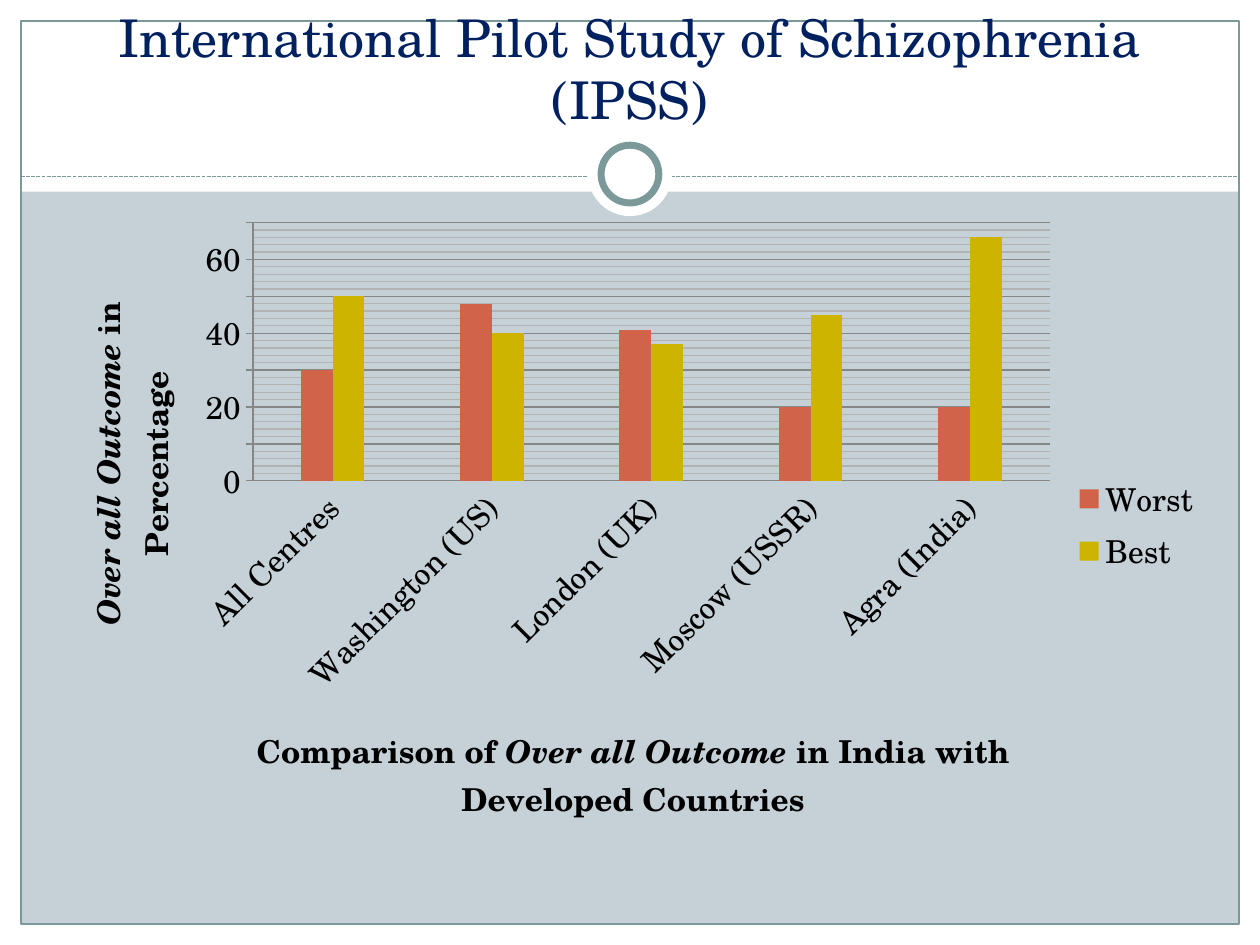
from dataclasses import dataclass
from typing import Optional

from lxml import etree
from pptx import Presentation
from pptx.chart.data import CategoryChartData
from pptx.dml.color import RGBColor
from pptx.enum import chart as charts, dml, shapes, text
from pptx.oxml import parse_xml
from pptx.oxml.ns import nsdecls, qn
from pptx.util import Pt


@dataclass(frozen=True)
class Theme:
    font: str = "TeX Gyre Schola"
    backdrop: str = "C5D1D7"
    paper: str = "FFFFFF"
    frame: str = "7C999A"
    heading: str = "002060"
    ink: str = "000000"
    grid: str = "868686"
    minor_grid: str = "B3B3B3"
    heading_size: float = 29.7
    chart_size: float = 18


@dataclass(frozen=True)
class Panel:
    kind: shapes.MSO_SHAPE
    left: float
    top: float
    width: float
    height: float
    fill: Optional[str] = None
    line: Optional[str] = None
    weight: float = 0.75


@dataclass(frozen=True)
class Outcome:
    name: str
    percentages: tuple
    color: str


@dataclass(frozen=True)
class AxisTitle:
    """Runs as (wording, italic), with the position as shares of the chart."""
    runs: tuple
    x: float
    y: float


THEME = Theme()
WIDTH, HEIGHT, MARGIN = 720, 540, 12
RULE_Y = 100.8
RECT, OVAL = shapes.MSO_SHAPE.RECTANGLE, shapes.MSO_SHAPE.OVAL


def centred_circle(diameter: float, line: Optional[str] = None) -> Panel:
    return Panel(OVAL, (WIDTH - diameter) / 2, 99.5 - diameter / 2,
                 diameter, diameter, THEME.paper, line, 4)


BORDERS = (
    Panel(RECT, 0, HEIGHT - MARGIN, WIDTH, MARGIN, THEME.paper),
    Panel(RECT, 0, 0, WIDTH, 109.5, THEME.paper),
    Panel(RECT, 0, 0, MARGIN, HEIGHT, THEME.paper),
    Panel(RECT, WIDTH - MARGIN, 0, MARGIN, HEIGHT, THEME.paper),
    Panel(RECT, MARGIN, MARGIN, WIDTH - 2 * MARGIN, HEIGHT - 2 * MARGIN,
          line=THEME.frame),
)
MEDALLION = (centred_circle(48), centred_circle(33, THEME.frame))

CENTRES = ("All Centres", "Washington (US)", "London (UK)",
           "Moscow (USSR)", "Agra (India)")
OUTCOMES = (
    Outcome("Worst", (30, 48, 41, 20, 20), "D16349"),
    Outcome("Best", (50, 40, 37, 45, 66), "CCB400"),
)
CENTRE_TITLE = AxisTitle((("Comparison of ", False), ("Over all Outcome", True),
                          (" in India with Developed Countries", False)), 0.18, 0.81)
PERCENT_TITLE = AxisTitle((("Over all Outcome", True), (" in Percentage", False)),
                          0.03, 0.14)


def rgb(value: str) -> RGBColor:
    return RGBColor.from_string(value)


def set_font(font, size: float, color: str) -> None:
    font.name, font.size = THEME.font, Pt(size)
    font.color.rgb = rgb(color)


def draw_panel(slide, panel: Panel) -> None:
    shape = slide.shapes.add_shape(panel.kind, Pt(panel.left), Pt(panel.top),
                                   Pt(panel.width), Pt(panel.height))
    shape.shadow.inherit = False
    if panel.fill:
        shape.fill.solid()
        shape.fill.fore_color.rgb = rgb(panel.fill)
    else:
        shape.fill.background()
    if panel.line:
        shape.line.color.rgb = rgb(panel.line)
        shape.line.width = Pt(panel.weight)
    else:
        shape.line.fill.background()


def draw_rule(slide) -> None:
    rule = slide.shapes.add_connector(shapes.MSO_CONNECTOR.STRAIGHT, Pt(MARGIN),
                                      Pt(RULE_Y), Pt(WIDTH - MARGIN), Pt(RULE_Y))
    rule.line.color.rgb = rgb(THEME.frame)
    rule.line.width = Pt(0.75)
    rule.line.dash_style = dml.MSO_LINE.SQUARE_DOT
    etree.SubElement(rule._element.spPr, qn("a:effectLst"))


def draw_heading(slide) -> None:
    heading = slide.shapes.add_textbox(Pt(24), Pt(18), Pt(672), Pt(60)).text_frame
    heading.word_wrap = True
    heading.vertical_anchor = text.MSO_ANCHOR.BOTTOM
    paragraph = heading.paragraphs[0]
    paragraph.alignment = text.PP_ALIGN.CENTER
    run = paragraph.add_run()
    run.text = "International Pilot Study of Schizophrenia (IPSS)"
    set_font(run.font, THEME.heading_size, THEME.heading)


def manual_layout(x: float, y: float, size: str = "", target: str = ""):
    return parse_xml(
        f'<c:layout {nsdecls("c")}><c:manualLayout>{target}'
        '<c:xMode val="edge"/><c:yMode val="edge"/>'
        f'<c:x val="{x}"/><c:y val="{y}"/>{size}</c:manualLayout></c:layout>')


def place(element, layout, index: int) -> None:
    """Put a manual layout in the element in place of any other."""
    for old in element.findall(qn("c:layout")):
        element.remove(old)
    element.insert(index, layout)


def title_axis(axis, title: AxisTitle) -> None:
    paragraph = axis.axis_title.text_frame.paragraphs[0]
    for wording, italic in title.runs:
        run = paragraph.add_run()
        run.text = wording
        set_font(run.font, THEME.chart_size, THEME.ink)
        run.font.bold, run.font.italic = True, italic
    place(axis.axis_title._element, manual_layout(title.x, title.y), 1)


def draw_chart(slide) -> None:
    data = CategoryChartData()
    data.categories = CENTRES
    for outcome in OUTCOMES:
        data.add_series(outcome.name, outcome.percentages)
    chart = slide.shapes.add_chart(charts.XL_CHART_TYPE.COLUMN_CLUSTERED, Pt(24),
                                   Pt(120), Pt(669.6), Pt(360), data).chart
    set_font(chart.font, THEME.chart_size, THEME.ink)
    chart.has_title = False
    chart.has_legend = True
    chart.legend.position = charts.XL_LEGEND_POSITION.RIGHT
    chart.legend.include_in_layout = False

    plot = chart.plots[0]
    plot.gap_width, plot.overlap, plot.vary_by_categories = 300, 0, False
    for series, outcome in zip(plot.series, OUTCOMES):
        series.format.fill.solid()
        series.format.fill.fore_color.rgb = rgb(outcome.color)

    centres, percent = chart.category_axis, chart.value_axis
    centres.major_tick_mark = charts.XL_TICK_MARK.NONE
    centres.tick_labels.font.size = Pt(THEME.chart_size)
    centres._element.txPr.bodyPr.set("rot", "-2700000")
    percent.minimum_scale, percent.maximum_scale = 0, 70
    percent.major_unit, percent.minor_unit = 10, 2
    percent.major_tick_mark = charts.XL_TICK_MARK.OUTSIDE
    percent.has_major_gridlines = percent.has_minor_gridlines = True
    for owner in (centres, percent, percent.major_gridlines):
        owner.format.line.color.rgb = rgb(THEME.grid)
        owner.format.line.width = Pt(0.75)
    percent._element.find(qn("c:minorGridlines")).append(parse_xml(
        f'<c:spPr {nsdecls("c", "a")}><a:ln w="{Pt(0.75)}"><a:solidFill>'
        f'<a:srgbClr val="{THEME.minor_grid}"/></a:solidFill></a:ln></c:spPr>'))
    title_axis(centres, CENTRE_TITLE)
    title_axis(percent, PERCENT_TITLE)
    percent.axis_title._element.find(".//" + qn("a:bodyPr")).set("rot", "-5400000")

    place(chart._chartSpace.chart.plotArea,
          manual_layout(0.18, 0.02, '<c:w val="0.68"/><c:h val="0.41"/>',
                        '<c:layoutTarget val="inner"/>'), 0)
    chart._chartSpace.find(qn("c:txPr")).addprevious(parse_xml(
        f'<c:spPr {nsdecls("c", "a")}><a:noFill/><a:ln><a:noFill/></a:ln></c:spPr>'))


def main() -> None:
    deck = Presentation()
    deck.slide_width, deck.slide_height = Pt(WIDTH), Pt(HEIGHT)
    slide = deck.slides.add_slide(deck.slide_layouts[6])
    slide.background.fill.solid()
    slide.background.fill.fore_color.rgb = rgb(THEME.backdrop)
    for panel in BORDERS:
        draw_panel(slide, panel)
    draw_rule(slide)
    for circle in MEDALLION:
        draw_panel(slide, circle)
    draw_heading(slide)
    draw_chart(slide)
    deck.save("out.pptx")


if __name__ == "__main__":
    main()
